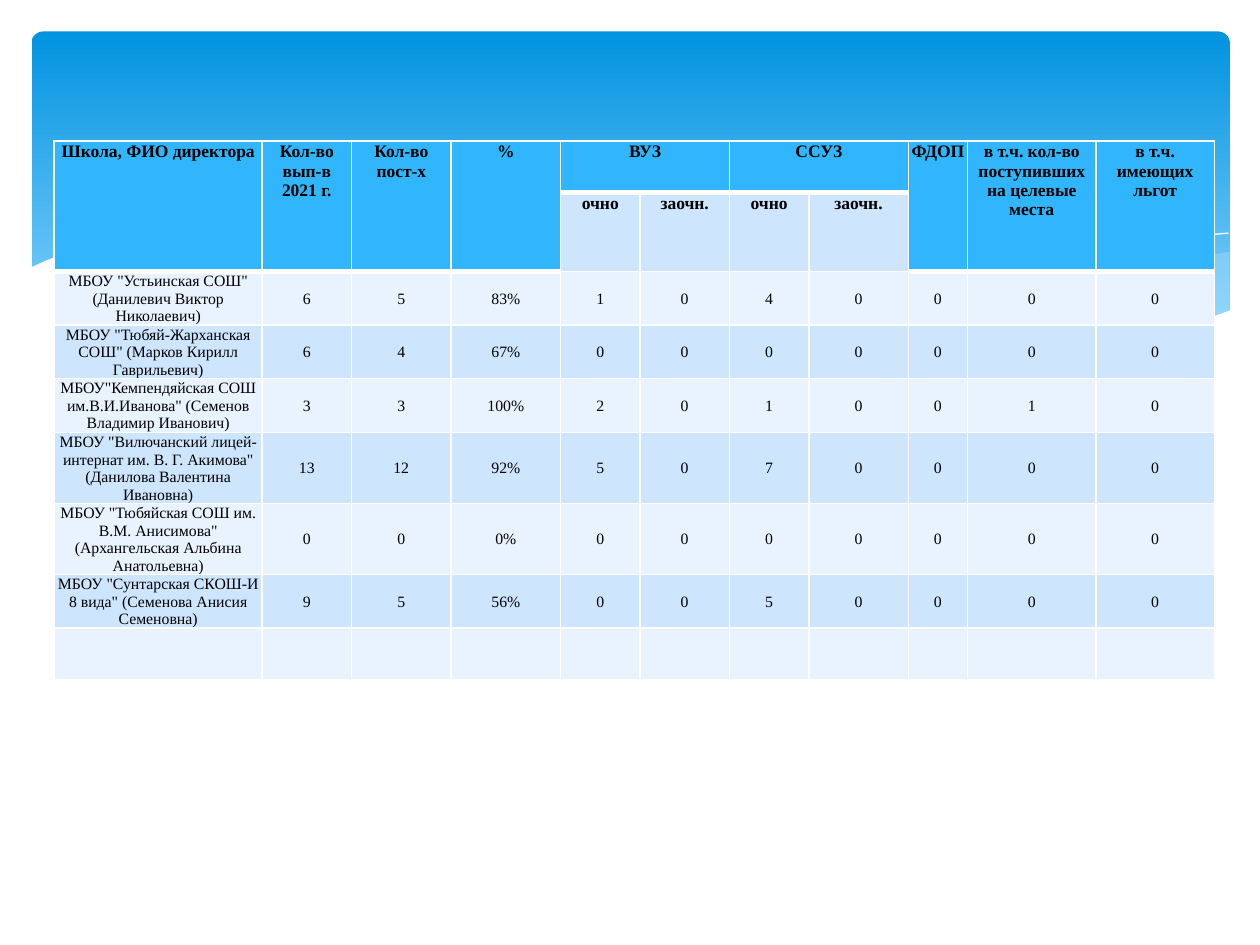
from lxml import etree
from pptx import Presentation
from pptx import util as u
from pptx.dml.color import RGBColor
from pptx.enum import shapes, text
from pptx.oxml import ns

SKY = RGBColor(0x02, 0x93, 0xE0)
PALE_SKY = RGBColor(0x83, 0xD3, 0xFE)
MIST = RGBColor(0xC6, 0xE7, 0xFC)
WHITE = RGBColor(0xFF, 0xFF, 0xFF)
BLACK = RGBColor(0x00, 0x00, 0x00)
HEADER = RGBColor(0x31, 0xB6, 0xFD)
BAND_DARK = RGBColor(0xCE, 0xE5, 0xFE)
BAND_LIGHT = RGBColor(0xE8, 0xF3, 0xFF)

RIGHT_SWELL = [
    (9.55, 0.2), (9.28, 0.24), (9.01, 0.3), (8.71, 0.36), (8.41, 0.43), (7.85, 0.57),
    (7.33, 0.68), (6.86, 0.77), (6.41, 0.85), (6.85, 0.91), (7.25, 0.95), (7.61, 0.97),
    (7.94, 0.98), (8.24, 0.96), (8.52, 0.94), (8.77, 0.9), (9.01, 0.85), (9.22, 0.79),
    (9.43, 0.72), (9.56, 0.67), (9.56, 0.2)]
MIDDLE_SWELL = [
    (8.73, 0.93), (8.17, 0.85), (7.55, 0.74), (6.86, 0.6), (6.09, 0.42), (5.64, 0.31),
    (5.21, 0.23), (4.82, 0.16), (4.45, 0.11), (4, 0.07), (3.6, 0.05), (3.24, 0.06),
    (2.93, 0.08), (2.66, 0.11), (3.03, 0.16), (3.42, 0.23), (3.84, 0.31), (4.29, 0.42),
    (5.1, 0.6), (5.81, 0.75), (6.45, 0.86), (7.02, 0.94), (7.53, 0.97), (7.98, 0.98),
    (8.37, 0.97), (8.73, 0.93)]
LONG_CREST = [
    (2.89, 0.15), (3.15, 0.11), (3.43, 0.09), (3.81, 0.07), (4.3, 0.08), (4.69, 0.1),
    (5.13, 0.14), (5.62, 0.2), (6.16, 0.28), (6.75, 0.39), (7.4, 0.53), (8.11, 0.71),
    (8.87, 0.92)]
SHORT_CREST = [
    (5.93, 0.77), (6.33, 0.66), (6.75, 0.55), (7.28, 0.43), (7.86, 0.3), (8.46, 0.19),
    (8.9, 0.12), (9.31, 0.07), (9.55, 0.05)]
WHITE_WAVE = [
    (9.57, 0.66), (9.3, 0.76), (9, 0.85), (8.67, 0.91), (8.3, 0.95), (7.89, 0.97),
    (7.41, 0.95), (6.88, 0.9), (6.28, 0.82), (5.59, 0.7), (4.83, 0.53), (4.27, 0.4),
    (3.71, 0.27), (3.2, 0.17), (2.72, 0.1), (2.3, 0.06), (1.91, 0.04), (1.57, 0.04),
    (1.26, 0.05), (0.99, 0.07), (0.75, 0.11), (0.56, 0.15), (0.39, 0.19), (0.26, 0.23),
    (0.16, 0.27), (0.03, 0.33), (0.03, 1.49), (9.57, 1.49)]

COLUMN_WIDTHS = [1.65, 0.71, 0.79, 0.87, 0.63, 0.71, 0.63, 0.79, 0.47, 1.02, 0.94]
ROW_HEIGHT = 0.41
SPLIT_COLUMNS = range(4, 8)
HEADINGS = [
    "Школа, ФИО директора", "Кол-во вып-в 2021 г.", "Кол-во пост-х", "%", "ВУЗ", "",
    "ССУЗ", "", "ФДОП", "в т.ч. кол-во поступивших на целевые места",
    "в т.ч. имеющих льгот"]
SUBHEADINGS = [""] * 4 + ["очно", "заочн."] * 2 + [""] * 3
SCHOOLS = [
    ['МБОУ "Устьинская СОШ" (Данилевич Виктор Николаевич)',
     6, 5, "83%", 1, 0, 4, 0, 0, 0, 0],
    ['МБОУ "Тюбяй-Жарханская СОШ" (Марков Кирилл Гаврильевич)',
     6, 4, "67%", 0, 0, 0, 0, 0, 0, 0],
    ['МБОУ"Кемпендяйская СОШ им.В.И.Иванова" (Семенов Владимир Иванович)',
     3, 3, "100%", 2, 0, 1, 0, 0, 1, 0],
    ['МБОУ "Вилючанский лицей-интернат им. В. Г. Акимова" (Данилова Валентина Ивановна)',
     13, 12, "92%", 5, 0, 7, 0, 0, 0, 0],
    ['МБОУ "Тюбяйская СОШ им. В.М. Анисимова" (Архангельская Альбина Анатольевна)',
     0, 0, "0%", 0, 0, 0, 0, 0, 0, 0],
    ['МБОУ "Сунтарская СКОШ-И 8 вида" (Семенова Анисия Семеновна)',
     9, 5, "56%", 0, 0, 5, 0, 0, 0, 0],
]


def add_band(page, box):
    """Draw the rounded gradient band filling the box."""
    band = page.shapes.add_shape(
        shapes.MSO_SHAPE.ROUNDED_RECTANGLE, *(u.Inches(side) for side in box))
    band.adjustments[0] = 0.034
    band.shadow.inherit = False
    band.line.fill.background()
    band.fill.gradient()
    band.fill.gradient_angle = 270
    for stop, color, position in zip(band.fill.gradient_stops, (SKY, PALE_SKY), (0, 0.9)):
        stop.color.rgb = color
        stop.position = position


def add_outline(page, origin, points, closed):
    """Build a freeform whose points are inches from the origin."""
    left, top = origin
    corners = [(u.Inches(left + x), u.Inches(top + y)) for x, y in points]
    builder = page.shapes.build_freeform(*corners[0])
    builder.add_line_segments(corners[1:], close=closed)
    outline = builder.convert_to_shape()
    outline.shadow.inherit = False
    return outline


def add_waves(page, origin):
    """Layer the translucent swells, the crest lines and the white wave."""
    for points, color, opacity in (
            (RIGHT_SWELL, MIST, 29), (MIDDLE_SWELL, MIST, 40),
            (LONG_CREST, None, 100), (SHORT_CREST, None, 100), (WHITE_WAVE, WHITE, 100)):
        wave = add_outline(page, origin, points, color is not None)
        if color is None:
            wave.fill.background()
            wave.line.color.rgb = WHITE
            wave.line.width = u.Pt(0)
            continue
        wave.line.fill.background()
        wave.fill.solid()
        wave.fill.fore_color.rgb = color
        if opacity < 100:
            shade = wave.fill._xPr.find(".//" + ns.qn("a:srgbClr"))
            etree.SubElement(shade, ns.qn("a:alpha"), val=str(opacity * 1000))


def set_borders(cell, top, bottom):
    """Give the cell white borders, with top and bottom widths in points."""
    properties = cell._tc.get_or_add_tcPr()
    for side, width in (("L", 1), ("R", 1), ("T", top), ("B", bottom)):
        border = etree.SubElement(properties, ns.qn("a:ln" + side), w=str(u.Pt(width)))
        fill = etree.SubElement(border, ns.qn("a:solidFill"))
        etree.SubElement(fill, ns.qn("a:srgbClr"), val=str(WHITE))


def format_cell(cell, value, row, column):
    """Fill, border and letter one cell according to its place."""
    split = column in SPLIT_COLUMNS
    heading = row < 2
    set_borders(cell,
                3 if row == 1 or (row == 2 and not split) else 1,
                3 if row == 0 or (row == 1 and not split) else 1)
    cell.fill.solid()
    if row == 0 or (row == 1 and not split):
        cell.fill.fore_color.rgb = HEADER
    else:
        cell.fill.fore_color.rgb = BAND_DARK if row % 2 else BAND_LIGHT
    cell.margin_left = cell.margin_right = cell.margin_top = u.Inches(0.01)
    cell.margin_bottom = 0
    cell.vertical_anchor = text.MSO_ANCHOR.TOP if heading else text.MSO_ANCHOR.MIDDLE
    if value == "":
        return
    cell.text_frame.text = str(value)
    para = cell.text_frame.paragraphs[0]
    para.alignment = text.PP_ALIGN.CENTER
    for span in para.runs:
        span.font.name = "Times New Roman"
        span.font.size = u.Pt(10 if heading else 9)
        span.font.bold = heading
        span.font.color.rgb = BLACK


def add_admissions_table(page, origin):
    """Place the table of school leavers' admissions at the origin."""
    rows = [HEADINGS, SUBHEADINGS, *SCHOOLS, [""] * len(COLUMN_WIDTHS)]
    left, top = origin
    table = page.shapes.add_table(
        len(rows), len(COLUMN_WIDTHS), u.Inches(left), u.Inches(top),
        u.Inches(sum(COLUMN_WIDTHS)), u.Inches(ROW_HEIGHT * len(rows))).table
    table.horz_banding = False
    for column, width in zip(table.columns, COLUMN_WIDTHS):
        column.width = u.Inches(width)
    for row in table.rows:
        row.height = u.Inches(ROW_HEIGHT)
    for row, values in enumerate(rows):
        for column, value in enumerate(values):
            format_cell(table.cell(row, column), value, row, column)
    for column in range(len(COLUMN_WIDTHS)):
        if column not in SPLIT_COLUMNS:
            table.cell(0, column).merge(table.cell(1, column))
    for column in SPLIT_COLUMNS[::2]:
        table.cell(0, column).merge(table.cell(0, column + 1))


def main():
    """Build the slide and save the deck."""
    deck = Presentation()
    deck.slide_width, deck.slide_height = u.Inches(10), u.Inches(7.5)
    page = deck.slides.add_slide(deck.slide_layouts[6])
    add_band(page, (0.25, 0.25, 9.51, 2.7))
    add_waves(page, (0.2, 1.8))
    add_admissions_table(page, (0.43, 1.12))
    deck.save("out.pptx")


if __name__ == "__main__":
    main()
